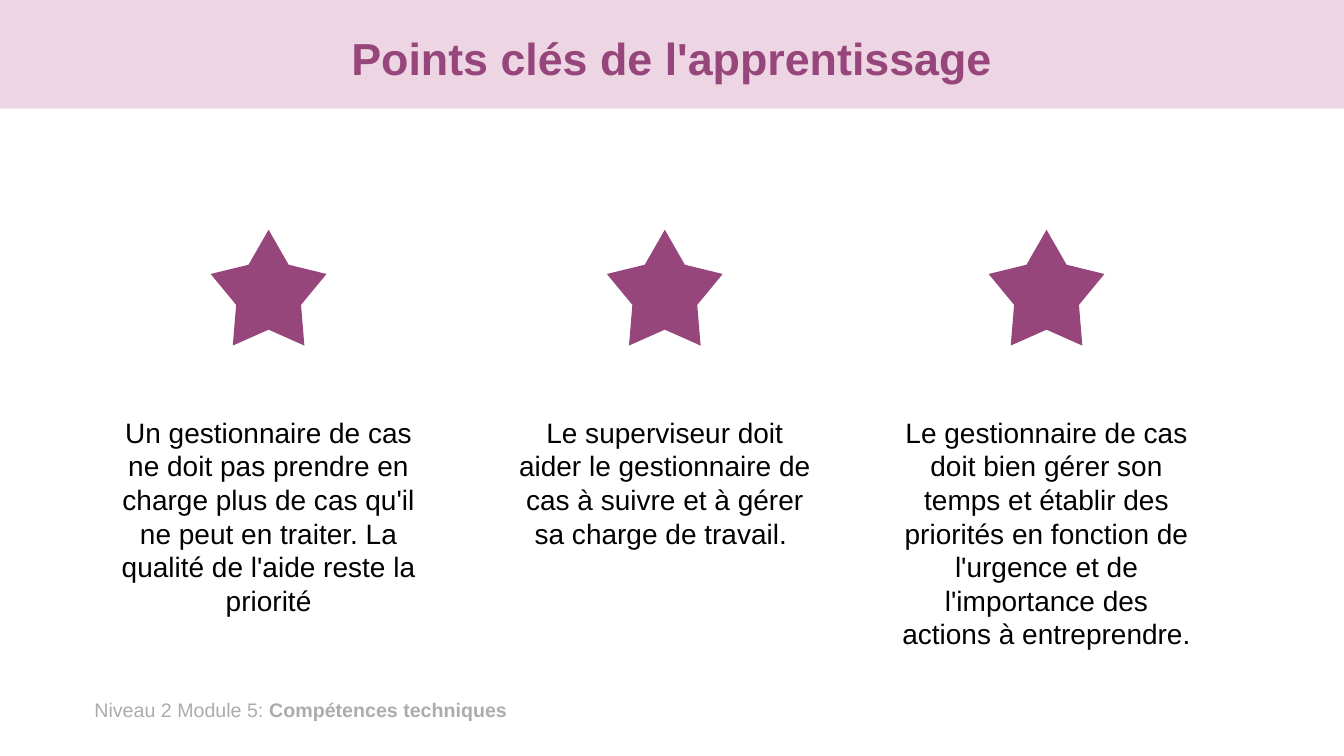
from dataclasses import dataclass

from pptx import Presentation
from pptx.dml.color import RGBColor
from pptx.enum.shapes import MSO_SHAPE
from pptx.enum.text import MSO_ANCHOR, PP_ALIGN
from pptx.util import Cm, Pt


@dataclass(frozen=True)
class Theme:
    font: str = "Arial"
    plum: RGBColor = RGBColor(0x97, 0x46, 0x7C)
    pink: RGBColor = RGBColor(0xED, 0xD5, 0xE4)
    grey: RGBColor = RGBColor(0xAE, 0xAB, 0xAB)
    black: RGBColor = RGBColor(0, 0, 0)
    title_size: int = 32
    body_size: int = 20
    footer_size: int = 14


THEME = Theme()
SLIDE_WIDTH, SLIDE_HEIGHT = 33.87, 19.05
STAR_SIZE = 2.92
STAR_TO_TEXT = 4.55

KEY_POINTS = [
    (2.64, 8.26, 5.38,
     "Un gestionnaire de cas ne doit pas prendre en charge plus de cas qu'il ne peut "
     "en traiter. La qualité de l'aide reste la priorité"),
    (12.73, 8.05, 3.68,
     "Le superviseur doit aider le gestionnaire de cas à suivre et à gérer sa charge "
     "de travail. "),
    (22.35, 8.05, 6.25,
     "Le gestionnaire de cas doit bien gérer son temps et établir des priorités en "
     "fonction de l'urgence et de l'importance des actions à entreprendre."),
]


def add_text(slide, box, runs, size, color, align=PP_ALIGN.LEFT,
             anchor=MSO_ANCHOR.TOP, line_spacing=None):
    text_box = slide.shapes.add_textbox(*map(Cm, box))
    frame = text_box.text_frame
    frame.word_wrap = True
    frame.vertical_anchor = anchor
    paragraph = frame.paragraphs[0]
    paragraph.alignment = align
    paragraph.line_spacing = line_spacing
    for text, bold in runs:
        run = paragraph.add_run()
        run.text = text
        run.font.name = THEME.font
        run.font.size = Pt(size)
        run.font.bold = bold
        run.font.color.rgb = color


def add_filled_shape(slide, kind, box, color):
    shape = slide.shapes.add_shape(kind, *map(Cm, box))
    shape.shadow.inherit = False
    shape.fill.solid()
    shape.fill.fore_color.rgb = color
    shape.line.fill.background()
    return shape


def add_header(slide, box, title):
    left, top, width, height = box
    add_filled_shape(slide, MSO_SHAPE.RECTANGLE, box, THEME.pink)
    title_box = (left + 2.33, top + 0.33, width - 4.66, height - 0.33)
    add_text(slide, title_box, [(title, True)], THEME.title_size, THEME.plum,
             align=PP_ALIGN.CENTER, anchor=MSO_ANCHOR.MIDDLE, line_spacing=0.9)


def add_key_point(slide, box, text):
    left, top, width, height = box
    star_box = (left + (width - STAR_SIZE) / 2, top, STAR_SIZE, STAR_SIZE)
    star = add_filled_shape(slide, MSO_SHAPE.STAR_5_POINT, star_box, THEME.plum)
    star.adjustments[0] = 0.28
    text_box = (left, top + STAR_TO_TEXT, width, height - STAR_TO_TEXT)
    add_text(slide, text_box, [(text, False)], THEME.body_size, THEME.black,
             align=PP_ALIGN.CENTER)


def add_footer(slide, box):
    runs = [("Niveau 2 Module 5: ", False), ("Compétences techniques", True)]
    add_text(slide, box, runs, THEME.footer_size, THEME.grey)


def main():
    presentation = Presentation()
    presentation.slide_width = Cm(SLIDE_WIDTH)
    presentation.slide_height = Cm(SLIDE_HEIGHT)
    slide = presentation.slides.add_slide(presentation.slide_layouts[6])
    add_header(slide, (0, 0, SLIDE_WIDTH, 2.74), "Points clés de l'apprentissage")
    for left, width, text_height, text in KEY_POINTS:
        add_key_point(slide, (left, 5.79, width, STAR_TO_TEXT + text_height), text)
    add_footer(slide, (2.13, 17.45, 11.56, 0.86))
    presentation.save("out.pptx")


if __name__ == "__main__":
    main()
